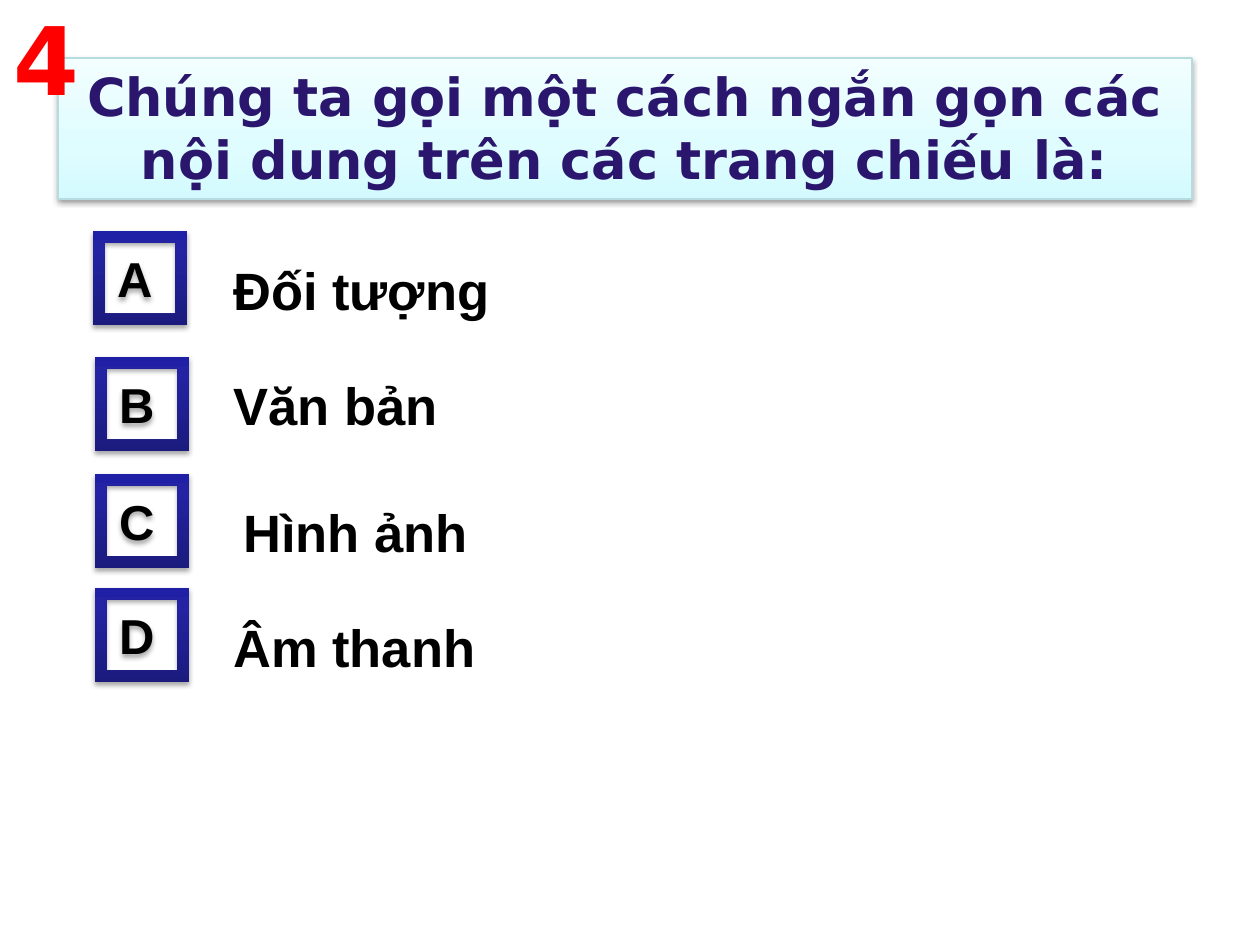
from copy import deepcopy

from lxml import etree
from pptx import Presentation, util as u
from pptx.dml.color import RGBColor
from pptx.enum import shapes, text
from pptx.oxml import parse_xml
from pptx.oxml.ns import nsdecls, qn

ANSWERS = [
    ("A", 93, 231, "Đối tượng", 221, 252, 721),
    ("B", 95, 357, "Văn bản", 221, 367, 662),
    ("C", 95, 474, "Hình ảnh", 231, 494, 809),
    ("D", 95, 588, "Âm thanh", 221, 609, 779),
]


def px(n):
    return u.Emu(round(n * 914400 / 126))


def rgb(code):
    return RGBColor.from_string(code)


class QuizSlide:
    """Style and current slide of a multiple-choice question."""

    PALE = [(0, "D3FBFF"), (0.35, "DFFCFF"), (1, "F2FEFF")]
    NAVY = [(0, "1B1B7E"), (0.8, "2323A3"), (1, "2020A6")]
    HEAD, BODY = "DejaVu Sans", "Arial"

    def __init__(self, prs):
        self.s = prs.slides.add_slide(prs.slide_layouts[6])

    def label(self, sp, words, size, font, color="000000", align="LEFT", **frame):
        tf = sp.text_frame
        for name, value in {"word_wrap": True, **frame}.items():
            setattr(tf, name, value)
        p = tf.paragraphs[0]
        p.alignment = getattr(text.PP_ALIGN, align)
        r = p.add_run()
        r.text = words
        for name, value in {"size": u.Pt(size), "name": font, "bold": True}.items():
            setattr(r.font, name, value)
        r.font.color.rgb = rgb(color)
        return r

    def panel(self, kind, box, stops, opacity, distance, line=None):
        sp = self.s.shapes.add_shape(kind, *map(px, box))
        sp.fill.gradient()
        sp.fill.gradient_angle = 90
        gs_lst = sp._element.spPr.find(qn("a:gradFill")).find(qn("a:gsLst"))
        gs_lst.append(deepcopy(gs_lst[-1]))
        for stop, (position, color) in zip(sp.fill.gradient_stops, stops):
            stop.position = position
            stop.color.rgb = rgb(color)
        if line:
            sp.line.color.rgb = rgb(line)
            sp.line.width = u.Pt(0.75)
        else:
            sp.line.fill.background()
        sp.shadow.inherit = False
        sp._element.spPr.find(qn("a:effectLst")).append(parse_xml(
            f'<a:outerShdw {nsdecls("a")} blurRad="{u.Pt(3.1)}" dist="{u.Pt(distance)}" '
            f'dir="5400000" rotWithShape="0"><a:srgbClr val="000000">'
            f'<a:alpha val="{opacity * 1000}"/></a:srgbClr></a:outerShdw>'))
        return sp

    def question(self, words, box):
        sp = self.panel(shapes.MSO_SHAPE.RECTANGLE, box, self.PALE, 38, 1.6, "B6DCDF")
        self.label(sp, words, 30, self.HEAD, "2B166E", "CENTER",
                   vertical_anchor=text.MSO_ANCHOR.TOP)

    def letter(self, words, x, y):
        sp = self.panel(shapes.MSO_SHAPE.FRAME, (x, y, 94, 94), self.NAVY, 35, 1.8)
        self.label(sp, words, 28, self.BODY, vertical_anchor=text.MSO_ANCHOR.MIDDLE)

    def answer(self, words, x, y, w):
        sp = self.s.shapes.add_textbox(*map(px, (x, y, w, 76)))
        self.label(sp, words, 30, self.BODY)

    def number(self, words, box, color):
        sp = self.s.shapes.add_textbox(*map(px, box))
        r = self.label(sp, words, 54, self.HEAD, color, "CENTER", word_wrap=False)
        ln = etree.Element(qn("a:ln"), w=str(u.Pt(1.42)))
        fill = etree.SubElement(ln, qn("a:solidFill"))
        etree.SubElement(fill, qn("a:srgbClr"), val=color)
        r._r.get_or_add_rPr().insert(0, ln)


def main():
    prs = Presentation()
    prs.slide_width, prs.slide_height = px(1260), px(945)
    quiz = QuizSlide(prs)
    quiz.question("Chúng ta gọi một cách ngắn gọn các nội dung trên các trang chiếu là:",
                  (58, 58, 1134, 141))
    for mark, x, y, words, left, top, width in ANSWERS:
        quiz.letter(mark, x, y)
        quiz.answer(words, left, top, width)
    quiz.number("4", (0, -5, 93, 127), "FF0000")
    prs.save("out.pptx")


if __name__ == "__main__":
    main()
